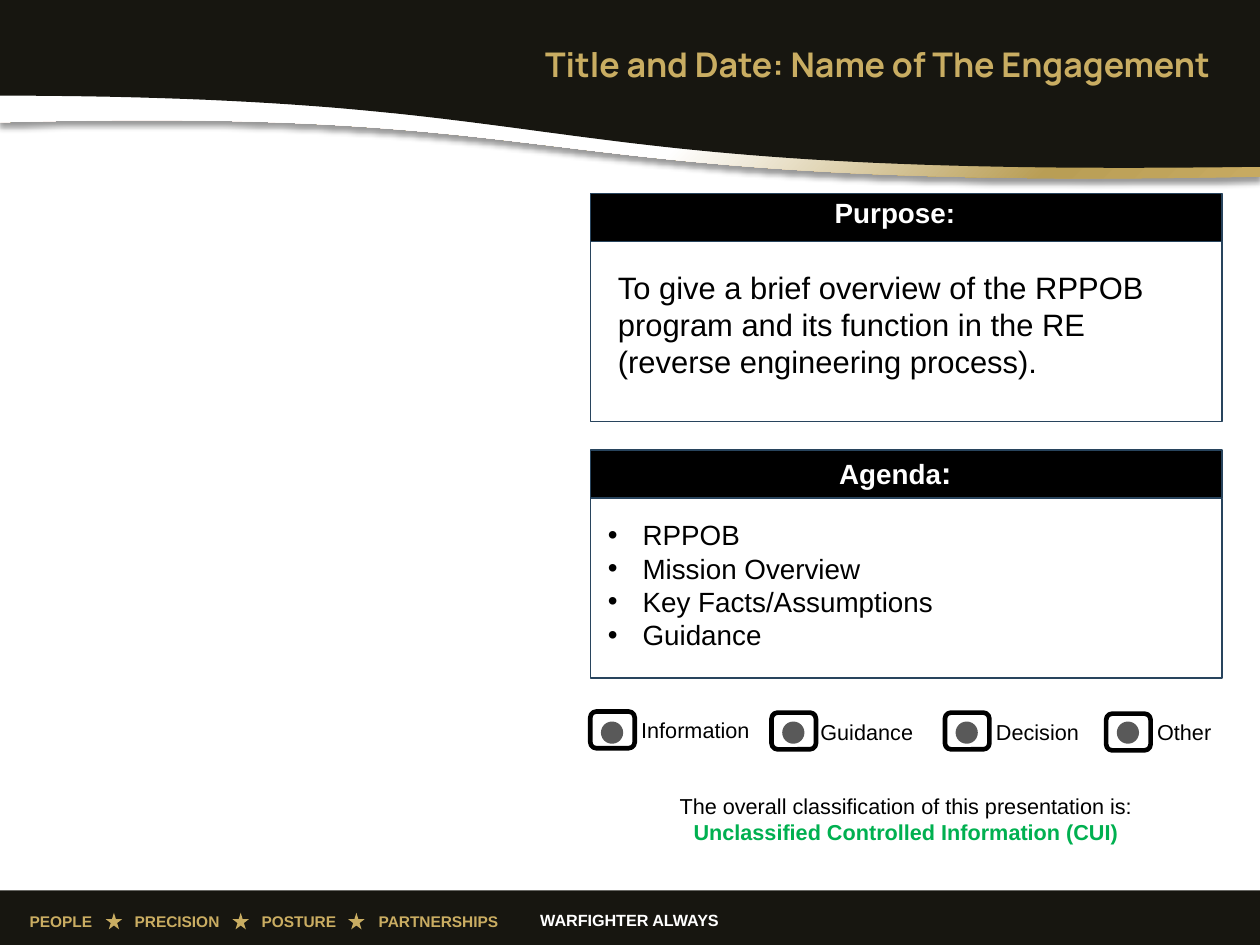
from dataclasses import dataclass
from lxml import etree
from pptx import Presentation, util as u
from pptx.dml.color import RGBColor
from pptx.enum import shapes, text
from pptx.oxml import ns, parse_xml

COLORS = {
    "ink": "171610", "gold": "C9AD62", "deep_gold": "B99E55", "edge_gold": "C7AA61",
    "motto": "CAAD62", "white": "FFFFFF", "black": "000000", "navy": "28445D",
    "green": "00B050", "gray": "595959",
}
SHAPE = shapes.MSO_SHAPE
ALIGN = text.PP_ALIGN
PANEL_LEFT, PANEL_WIDTH = 382.3, 409
HEADER_HEIGHT, BODY_HEIGHT = 31.1, 116.6


@dataclass
class Run:
    words: str
    size: float
    color: str = "black"
    bold: bool = False
    font: str = "Arial"


@dataclass
class Label:
    box: tuple
    lines: list
    align: ALIGN = ALIGN.LEFT
    bullet: bool = False
    tabs: tuple = ()
    anchor: text.MSO_ANCHOR = text.MSO_ANCHOR.TOP


@dataclass
class Wave:
    left: float
    top: float
    start: float
    controls: tuple
    end: float


@dataclass
class Option:
    name: str
    left: float
    top: float
    label_left: float
    label_top: float
    label_width: float


def rgb(name: str) -> RGBColor:
    return RGBColor.from_string(COLORS[name])


def points(values: tuple) -> list:
    return [u.Pt(value) for value in values]


def add_block(slide, kind, box: tuple, fill: str = "", line: str = "", weight: float = 1):
    block = slide.shapes.add_shape(kind, *points(box))
    paint(block, fill, line, weight)
    return block


def paint(block, fill: str, line: str = "", weight: float = 1) -> None:
    block.shadow.inherit = False
    if fill:
        block.fill.solid()
        block.fill.fore_color.rgb = rgb(fill)
    else:
        block.fill.background()
    if line:
        block.line.color.rgb = rgb(line)
        block.line.width = u.Pt(weight)
    else:
        block.line.fill.background()


def add_label(slide, label: Label) -> None:
    frame = slide.shapes.add_textbox(*points(label.box)).text_frame
    frame.word_wrap = True
    frame.vertical_anchor = label.anchor
    for index, runs in enumerate(label.lines):
        paragraph = frame.paragraphs[0] if index == 0 else frame.add_paragraph()
        paragraph.alignment = label.align
        properties = paragraph._p.get_or_add_pPr()
        if label.bullet:
            properties.set("marL", str(u.Pt(22.5)))
            properties.set("indent", str(-u.Pt(22.5)))
            etree.SubElement(properties, ns.qn("a:buFont"), typeface="Arial")
            etree.SubElement(properties, ns.qn("a:buChar"), char="•")
        if label.tabs:
            stops = etree.SubElement(properties, ns.qn("a:tabLst"))
            for stop in label.tabs:
                etree.SubElement(stops, ns.qn("a:tab"), pos=str(u.Pt(stop)), algn="l")
        for part in runs:
            run = paragraph.add_run()
            run.text = part.words
            run.font.size = u.Pt(part.size)
            run.font.name = part.font
            run.font.bold = part.bold
            run.font.color.rgb = rgb(part.color)


def add_wave(slide, wave: Wave, fill: str):
    right, steps = 816, 60
    xs = (wave.left, *(x for x, _ in wave.controls), right)
    ys = (wave.start, *(y for _, y in wave.controls), wave.end)

    def curve(p: tuple, t: float) -> float:
        s = 1 - t
        return s**3 * p[0] + 3 * s * s * t * p[1] + 3 * s * t * t * p[2] + t**3 * p[3]

    edge = [(curve(xs, n / steps), curve(ys, n / steps)) for n in range(steps + 1)]
    outline = slide.shapes.build_freeform(u.Pt(right), u.Pt(wave.top))
    outline.add_line_segments([points(p) for p in [(wave.left, wave.top), *edge]], close=True)
    band = outline.convert_to_shape()
    paint(band, fill)
    return band


def gild(ribbon) -> None:
    stops = "".join(
        f'<a:gs pos="{place * 1000}"><a:srgbClr val="{COLORS[name]}"/></a:gs>'
        for place, name in ((55, "white"), (84, "deep_gold"), (100, "edge_gold"))
    )
    gradient = parse_xml(
        f'<a:gradFill {ns.nsdecls("a")} rotWithShape="1"><a:gsLst>{stops}</a:gsLst>'
        '<a:path path="circle"><a:fillToRect r="100000" b="100000"/></a:path></a:gradFill>'
    )
    properties = ribbon._element.spPr
    properties.replace(properties.find(ns.qn("a:solidFill")), gradient)
    shadow = etree.SubElement(
        properties.find(ns.qn("a:effectLst")), ns.qn("a:outerShdw"),
        blurRad=str(u.Pt(4)), dist=str(u.Pt(3)), dir="5400000", algn="t", rotWithShape="0",
    )
    tint = etree.SubElement(shadow, ns.qn("a:srgbClr"), val=COLORS["black"])
    etree.SubElement(tint, ns.qn("a:alpha"), val="40000")


def add_panel(slide, header_top: float, heading: Label, body: Label) -> None:
    for top, height, fill in (
        (header_top + HEADER_HEIGHT, BODY_HEIGHT, "white"),
        (header_top, HEADER_HEIGHT, "black"),
    ):
        add_block(slide, SHAPE.RECTANGLE, (PANEL_LEFT, top, PANEL_WIDTH, height), fill, "navy")
    add_label(slide, heading)
    add_label(slide, body)


def add_option(slide, option: Option) -> None:
    add_block(slide, SHAPE.ROUNDED_RECTANGLE, (option.left, option.top, 28.8, 23.8),
              line="black", weight=3)
    add_block(slide, SHAPE.OVAL, (option.left + 6.9, 467.3, 14.4, 14.4), "gray")
    add_label(slide, Label((option.label_left, option.label_top, option.label_width, 24.2),
                           [[Run(option.name, 14)]]))


def main() -> None:
    deck = Presentation()
    deck.slide_width, deck.slide_height = u.Pt(816), u.Pt(612)
    slide = deck.slides.add_slide(deck.slide_layouts[6])

    gild(add_wave(slide, Wave(0, 42.5, 79.2, ((395.3, 68.4), (326.9, 123.8)), 114.5), "white"))
    add_wave(slide, Wave(-0.7, -0.7, 61.9, ((393.1, 62.6), (325.4, 115.2)), 108), "ink")
    add_label(slide, Label((191.5, 24.5, 599, 33.8), [[Run(
        "Title and Date: Name of The Engagement", 22, "gold", True, "Manrope")]],
        ALIGN.RIGHT, anchor=text.MSO_ANCHOR.MIDDLE))

    add_block(slide, SHAPE.RECTANGLE, (0, 576.7, 816, 36), "ink")
    add_label(slide, Label((321.8, 586.1, 172, 20.2), [[
        Run("WARFIGHTER ALWAYS", 10.5, "white", True)]], ALIGN.CENTER))
    add_label(slide, Label((12.2, 586.8, 332, 20.2), [[
        Run("PEOPLE\tPRECISION\tPOSTURE\tPARTNERSHIPS", 10, "motto", True)]],
        tabs=(68, 150.2, 226)))
    for star_left in (68.4, 150.5, 225.4):
        add_block(slide, SHAPE.STAR_5_POINT, (star_left, 591.1, 10.8, 10.8), "gold")

    add_panel(
        slide, 125.3,
        Label((533.5, 123.1, 107.3, 28.8), [[Run("Purpose:", 18, "white", True)]]),
        Label((393.1, 170.6, 391.7, 80), [[Run(
            "To give a brief overview of the RPPOB program and its function in the RE "
            "(reverse engineering process).", 20)]]),
    )
    topics = ("RPPOB", "Mission Overview", "Key Facts/Assumptions", "Guidance")
    add_panel(
        slide, 291.6,
        Label((536.4, 290.2, 100, 31.7), [[
            Run("Agenda", 18, "white", True), Run(":", 20, "white", True)]]),
        Label((386.6, 331.9, 391.7, 94.3), [[Run(topic, 18)] for topic in topics], bullet=True),
    )

    for option in (
        Option("Information", 382.3, 460.8, 408.2, 460.8, 86.4),
        Option("Guidance", 499.7, 461.5, 524.2, 462.2, 85.7),
        Option("Decision", 612, 461.5, 637.9, 462.2, 72),
        Option("Other", 716.4, 462.2, 742.3, 462.2, 52.6),
    ):
        add_option(slide, option)

    add_label(slide, Label((PANEL_LEFT, 509.8, PANEL_WIDTH, 41), [
        [Run("The overall classification of this presentation is:", 14)],
        [Run("Unclassified Controlled Information (CUI)", 14, "green", True)],
    ], ALIGN.CENTER))
    deck.save("out.pptx")


if __name__ == "__main__":
    main()
